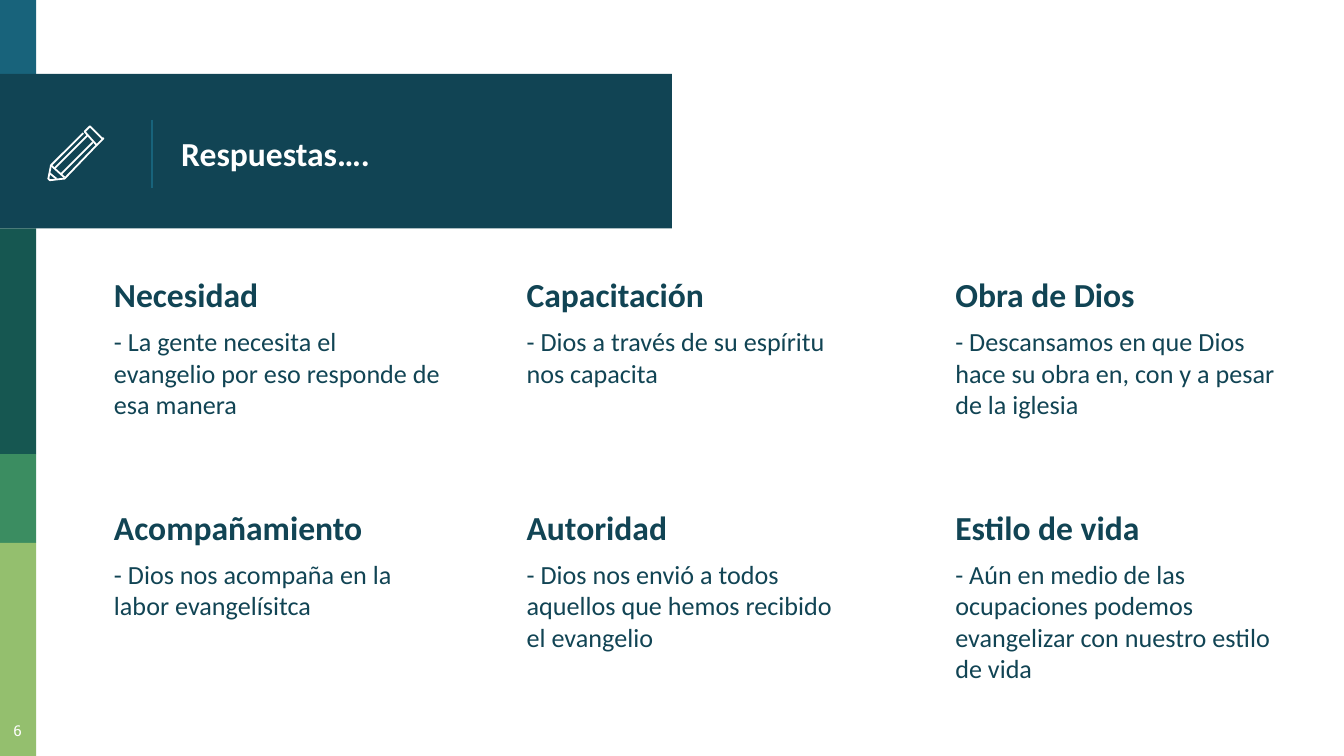
from lxml.etree import SubElement
from pptx import Presentation
from pptx.dml.color import RGBColor
from pptx.enum.shapes import MSO_CONNECTOR, MSO_SHAPE
from pptx.enum.text import MSO_ANCHOR, PP_ALIGN
from pptx.oxml.ns import qn
from pptx.util import Inches, Pt

WIDTH = 10
HEIGHT = WIDTH * 9 / 16
BLUE = RGBColor(0x18, 0x63, 0x7B)
NAVY = RGBColor(0x11, 0x44, 0x54)
TEAL = RGBColor(0x16, 0x57, 0x51)
GREEN = RGBColor(0x3B, 0x8D, 0x61)
LIME = RGBColor(0x94, 0xBF, 0x6E)
WHITE = RGBColor(0xFF, 0xFF, 0xFF)

# Content
TITLE = "Respuestas…."
PAGE_NUMBER = "6"
ANSWERS = [
    [("Necesidad", "- La gente necesita el evangelio por eso responde de esa manera"),
     ("Capacitación", "- Dios a través de su espíritu nos capacita"),
     ("Obra de Dios", "- Descansamos en que Dios hace su obra en, con y a pesar de la iglesia")],
    [("Acompañamiento", "- Dios nos acompaña en la labor evangelísitca"),
     ("Autoridad", "- Dios nos envió a todos aquellos que hemos recibido el evangelio"),
     ("Estilo de vida", "- Aún en medio de las ocupaciones podemos evangelizar con nuestro estilo de vida")],
]

# Layout: side bands as (top, bottom, width, colour)
STRIP = 0.27
BANDS = [
    (0, 0.58, STRIP, BLUE),
    (0.55, 1.7, WIDTH / 2, NAVY),
    (1.7, 3.38, STRIP, TEAL),
    (3.38, 4.04, STRIP, GREEN),
    (4.04, HEIGHT, STRIP, LIME),
]
COLUMNS = [0.75, 3.82, 7.01]
ROWS = [1.94, 3.67]
CELL = (2.64, 1.43)

# Pencil strokes as (points in hundredths of an inch, closed)
PENCIL = [
    ([(76, 103), (68, 95), (67, 94), (66, 95), (63, 98),
      (72, 108), (76, 104), (77, 103)], True),
    ([(69, 106), (45, 130)], False),
    ([(62, 99), (38, 123), (36, 133), (37, 134), (38, 134),
      (47, 133), (48, 133), (72, 108)], False),
    ([(41, 125), (65, 101)], False),
    ([(42, 133), (37, 129)], False),
    ([(38, 123), (48, 132)], False),
]

HEADING = {"size": Pt(18), "name": "Calibri", "bold": True}
BODY = {"size": Pt(14), "name": "Calibri", "bold": False}
NUMBER = {"size": Pt(8), "name": "Roboto Slab"}


def add_text(slide, box, lines, color, anchor=MSO_ANCHOR.TOP, align=PP_ALIGN.LEFT):
    """Add a text box; each line is a (text, font format) pair."""
    frame = slide.shapes.add_textbox(*map(Inches, box)).text_frame
    frame.word_wrap = True
    frame.vertical_anchor = anchor
    for side in ("left", "top", "right", "bottom"):
        setattr(frame, f"margin_{side}", Inches(0.1))
    for index, (text, font_format) in enumerate(lines):
        paragraph = frame.add_paragraph() if index else frame.paragraphs[0]
        paragraph.alignment = align
        paragraph.space_before = Pt(6 if index else 0)
        run = paragraph.add_run()
        run.text = text
        run.font.color.rgb = color
        for name, value in font_format.items():
            setattr(run.font, name, value)


def add_band(slide, top, bottom, width, color):
    band = slide.shapes.add_shape(MSO_SHAPE.RECTANGLE, 0, Inches(top),
                                  Inches(width), Inches(bottom - top))
    band.shadow.inherit = False
    band.fill.solid()
    band.fill.fore_color.rgb = color
    band.line.fill.background()


def add_stroke(slide, points, closed):
    builder = slide.shapes.build_freeform(*points[0], scale=Inches(0.01))
    builder.add_line_segments(points[1:], close=closed)
    stroke = builder.convert_to_shape()
    stroke.shadow.inherit = False
    stroke.fill.background()
    stroke.line.color.rgb = WHITE
    stroke.line.width = Pt(0.96)


def main():
    presentation = Presentation()
    presentation.slide_width = Inches(WIDTH)
    presentation.slide_height = Inches(HEIGHT)
    slide = presentation.slides.add_slide(presentation.slide_layouts[6])

    # Side strip and title banner
    for band in BANDS:
        add_band(slide, *band)
    divider = slide.shapes.add_connector(
        MSO_CONNECTOR.STRAIGHT, *map(Inches, (1.13, 0.89, 1.13, 1.4)))
    divider.line.color.rgb = BLUE
    divider.line.width = Pt(0.75)
    SubElement(divider._element.spPr, qn("a:effectLst"))
    add_text(slide, (1.25, 0.58, 3.51, 1.12), [(TITLE, HEADING)], WHITE,
             anchor=MSO_ANCHOR.MIDDLE)

    # Grid of answers
    for top, answers in zip(ROWS, ANSWERS):
        for left, (heading, body) in zip(COLUMNS, answers):
            add_text(slide, (left, top, *CELL),
                     [(heading, HEADING), (body, BODY)], NAVY)

    # Pencil icon
    for points, closed in PENCIL:
        add_stroke(slide, points, closed)

    # Page number
    add_text(slide, (-0.06, 5.3, 0.38, 0.32), [(PAGE_NUMBER, NUMBER)], WHITE,
             align=PP_ALIGN.CENTER)

    presentation.save("out.pptx")


if __name__ == "__main__":
    main()
